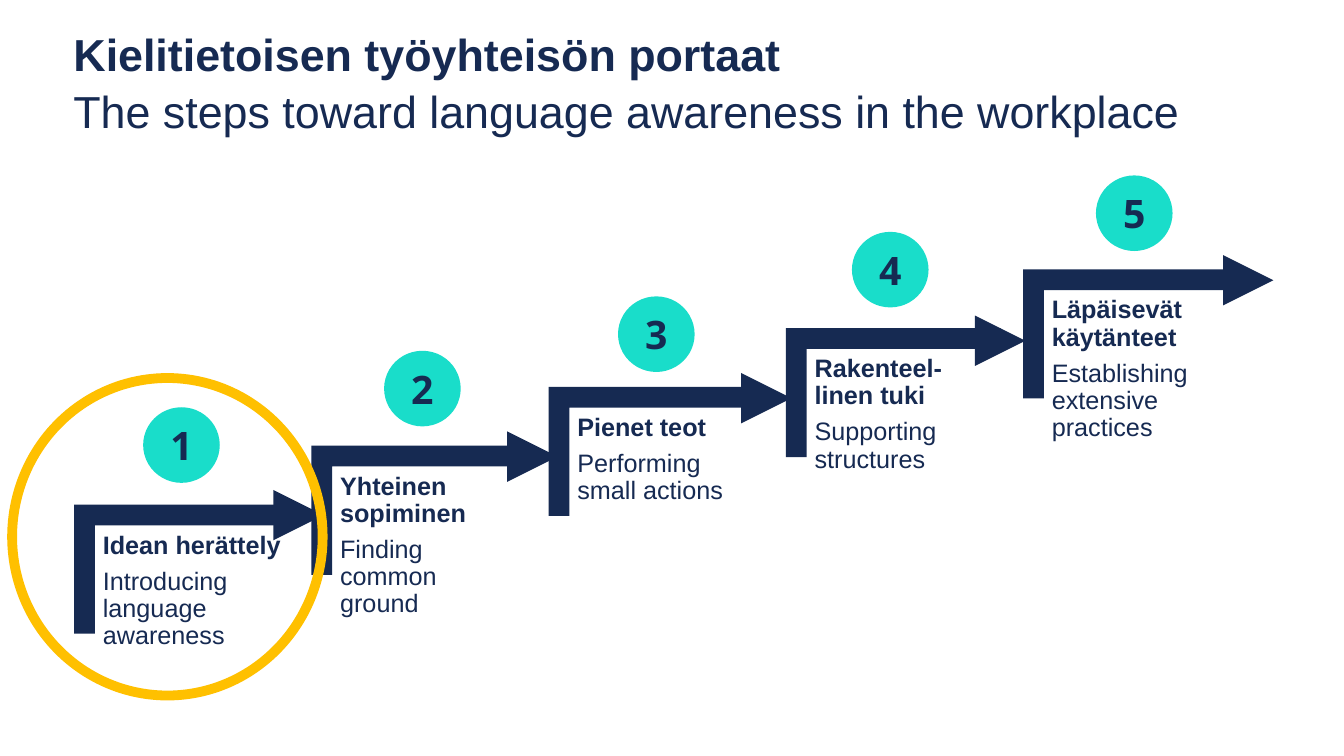
import pptx
import pptx.util
import pptx.dml.color
import pptx.enum.shapes
import pptx.enum.text
import lxml.etree
from pptx.util import Inches

NAVY, TURQUOISE, AMBER = "162A52", "19DDCA", "FFC000"
SHAPE = pptx.enum.shapes.MSO_SHAPE
MIDDLE = pptx.enum.text.MSO_ANCHOR.MIDDLE


def color(hex_string):
    return pptx.dml.color.RGBColor.from_string(hex_string)


def style_font(font, size, name, bold):
    font.size = pptx.util.Pt(size)
    font.name = name
    font.bold = bold
    font.color.rgb = color(NAVY)


deck = pptx.Presentation()
deck.slide_width, deck.slide_height = Inches(13.33), Inches(7.5)
slide = deck.slides.add_slide(deck.slide_layouts[6])
shapes = slide.shapes

# Title in two languages
title = shapes.add_textbox(Inches(0.63), Inches(0.34), Inches(12.27), Inches(0.92))
title.text_frame.word_wrap = True
title.text_frame.vertical_anchor = MIDDLE
heading = title.text_frame.paragraphs[0]
heading.line_spacing = 1.05
finnish_title = heading.add_run()
finnish_title.text = "Kielitietoisen työyhteisön portaat"
style_font(finnish_title.font, 32, "Arial", True)
heading.add_line_break()
english_title = heading.add_run()
english_title.text = "The steps toward language awareness in the workplace"
style_font(english_title.font, 32, "Arial", False)

# Finnish name, English name, badge left and top, arrow left and top
steps = [
    ("Idean herättely", "Introducing language awareness", 1.42, 4.04, 2.25, 5.11),
    ("Yhteinen sopiminen", "Finding common ground", 3.81, 3.48, 4.57, 4.53),
    ("Pienet teot", "Performing small actions", 6.13, 2.94, 6.89, 3.95),
    ("Rakenteel-linen tuki", "Supporting structures", 8.45, 2.3, 9.21, 3.38),
    ("Läpäisevät käytänteet", "Establishing extensive practices", 10.87, 1.74, 11.67, 2.78),
]
STEP_RUN, STEP_RISE = 2.353, 0.583

for number, (finnish, english, badge_x, badge_y, arrow_x, arrow_y) in enumerate(steps, 1):
    run, rise = STEP_RUN * (number - 1), STEP_RISE * (number - 1)

    stair = shapes.add_shape(SHAPE.CORNER, Inches(1.16 + run), Inches(4.58 - rise),
                             Inches(1.28), Inches(2.13))
    stair.rotation = 90
    stair.adjustments[0] = stair.adjustments[1] = 0.161
    stair.shadow.inherit = False
    stair.fill.solid()
    stair.fill.fore_color.rgb = color(NAVY)
    stair.line.fill.background()

    label = shapes.add_textbox(Inches(0.95 + run), Inches(5.21 - rise),
                               Inches(1.92), Inches(1.68))
    frame = label.text_frame
    frame.word_wrap = True
    frame.margin_left = frame.margin_right = Inches(0.07)
    frame.margin_top = frame.margin_bottom = Inches(0.07)
    frame.text = f"{finnish}\n{english}"
    for paragraph, bold in zip(frame.paragraphs, (True, False)):
        paragraph.line_spacing = 0.9
        paragraph.space_after = pptx.util.Pt(6.3)
        style_font(paragraph.font, 18, "Arial", bold)

    badge = shapes.add_shape(SHAPE.FLOWCHART_CONNECTOR, Inches(badge_x), Inches(badge_y),
                             Inches(0.76), Inches(0.75))
    badge.shadow.inherit = False
    badge.fill.solid()
    badge.fill.fore_color.rgb = color(TURQUOISE)
    badge.line.fill.background()
    badge.text_frame.vertical_anchor = MIDDLE
    badge.text_frame.text = str(number)
    digit = badge.text_frame.paragraphs[0]
    digit.alignment = pptx.enum.text.PP_ALIGN.CENTER
    style_font(digit.font, 28, "Open Sans", True)

    arrow = shapes.add_connector(pptx.enum.shapes.MSO_CONNECTOR.STRAIGHT,
                                 Inches(arrow_x), Inches(arrow_y),
                                 Inches(arrow_x + 0.96), Inches(arrow_y))
    arrow.line.color.rgb = color(NAVY)
    arrow.line.width = pptx.util.Pt(12)
    line_xml = arrow.line._get_or_add_ln()
    lxml.etree.SubElement(line_xml, pptx.oxml.ns.qn("a:tailEnd"), type="triangle")
    lxml.etree.SubElement(arrow._element.spPr, pptx.oxml.ns.qn("a:effectLst"))

# Ring around the first step
ring = shapes.add_shape(SHAPE.OVAL, Inches(0.12), Inches(3.75), Inches(3.08), Inches(3.15))
ring.shadow.inherit = False
ring.fill.background()
ring.line.color.rgb = color(AMBER)
ring.line.width = pptx.util.Pt(7)

deck.save("out.pptx")
